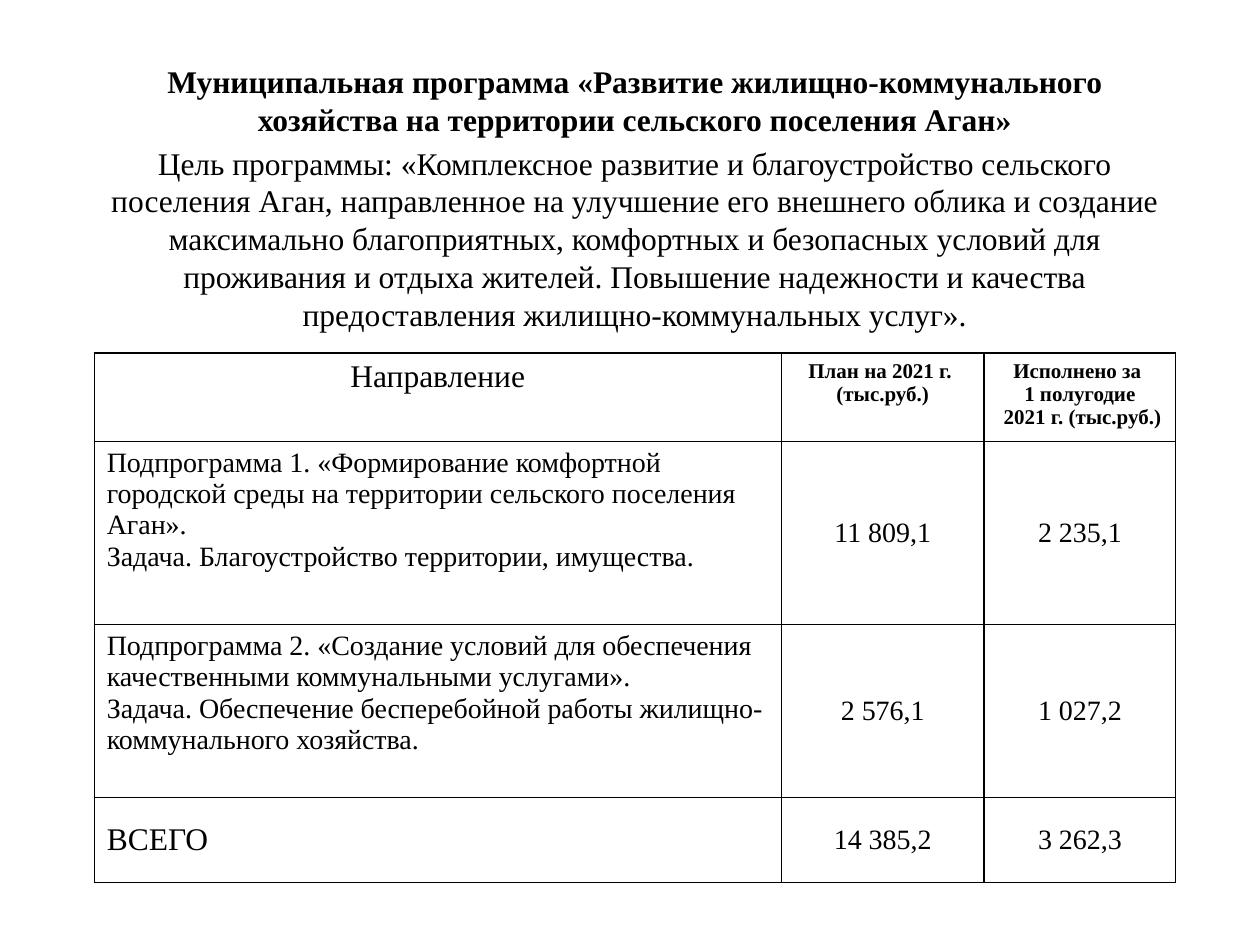
"""Build the slide on the housing and utilities programme with its funding table."""
from lxml.etree import SubElement
from pptx import Presentation
from pptx.dml.color import RGBColor
from pptx.enum.text import MSO_ANCHOR as Anchor, PP_ALIGN as Align
from pptx.oxml.ns import qn
from pptx.util import Cm, Pt

BLACK = RGBColor(0, 0, 0)
FONT = "Times New Roman"


def write(frame, lines, size, bold=False, align=Align.CENTER):
    frame.word_wrap = True
    frame.text = "\n".join(lines)
    for paragraph in frame.paragraphs:
        paragraph.alignment = align
        font = paragraph.font
        font.name, font.size, font.bold = FONT, Pt(size), bold
        font.color.rgb = BLACK


def outline(cell):
    properties = cell._tc.get_or_add_tcPr()
    for side in ("a:lnL", "a:lnR", "a:lnT", "a:lnB"):
        line = SubElement(properties, qn(side), w=str(Pt(1)))
        fill = SubElement(line, qn("a:solidFill"))
        SubElement(fill, qn("a:srgbClr"), val=str(BLACK))


prs = Presentation()
prs.slide_width, prs.slide_height = Cm(25.4), Cm(19.05)
slide = prs.slides.add_slide(prs.slide_layouts[6])

LEFT, WIDTH = Cm(1.9), Cm(21.8)
intro = slide.shapes.add_textbox(LEFT, Cm(1.12), WIDTH, Cm(5.9)).text_frame
write(intro, [
    "Муниципальная программа «Развитие жилищно-коммунального хозяйства на территории сельского поселения Аган»",
    "Цель программы: «Комплексное развитие и благоустройство сельского поселения Аган, "
    "направленное на улучшение его внешнего облика и создание максимально благоприятных, "
    "комфортных и безопасных условий для проживания и отдыха жителей. Повышение надежности "
    "и качества предоставления жилищно-коммунальных услуг».",
], 18)
intro.paragraphs[0].font.bold = True
for paragraph in intro.paragraphs:
    paragraph.space_before = Pt(3.6)

headings = [
    ["Направление"],
    ["План на 2021 г. ", "(тыс.руб.)"],
    ["Исполнено за ", "1 полугодие", " 2021 г. (тыс.руб.)"],
]
programmes = [
    (["Подпрограмма 1. «Формирование комфортной городской среды на территории сельского поселения Аган».",
      "Задача. Благоустройство территории, имущества."], "11 809,1", "2 235,1"),
    (["Подпрограмма 2. «Создание условий для обеспечения качественными коммунальными услугами».",
      "Задача. Обеспечение бесперебойной работы жилищно-коммунального хозяйства."], "2 576,1", "1 027,2"),
    (["ВСЕГО"], "14 385,2", "3 262,3"),
]
column_widths = [13.85, 4.09, 3.86]
row_heights = [1.72, 3.69, 3.49, 1.71]

funding = slide.shapes.add_table(
    len(row_heights), len(column_widths), LEFT, Cm(7.12), WIDTH, Cm(sum(row_heights))).table
funding.first_row = funding.horz_banding = False
for column, width in zip(funding.columns, column_widths):
    column.width = Cm(width)
for row, height in zip(funding.rows, row_heights):
    row.height = Cm(height)

for index, heading in enumerate(headings):
    write(funding.cell(0, index).text_frame, heading, 12 if index else 18, bold=index > 0)

for index, (direction, *amounts) in enumerate(programmes, 1):
    is_total = index == len(programmes)
    name = funding.cell(index, 0)
    write(name.text_frame, direction, 18 if is_total else 16, align=Align.LEFT)
    if is_total:
        name.vertical_anchor = Anchor.MIDDLE
    for position, amount in enumerate(amounts, 1):
        cell = funding.cell(index, position)
        write(cell.text_frame, [amount], 16)
        cell.vertical_anchor = Anchor.MIDDLE

for cell in funding.iter_cells():
    outline(cell)
    cell.fill.background()

prs.save("out.pptx")
